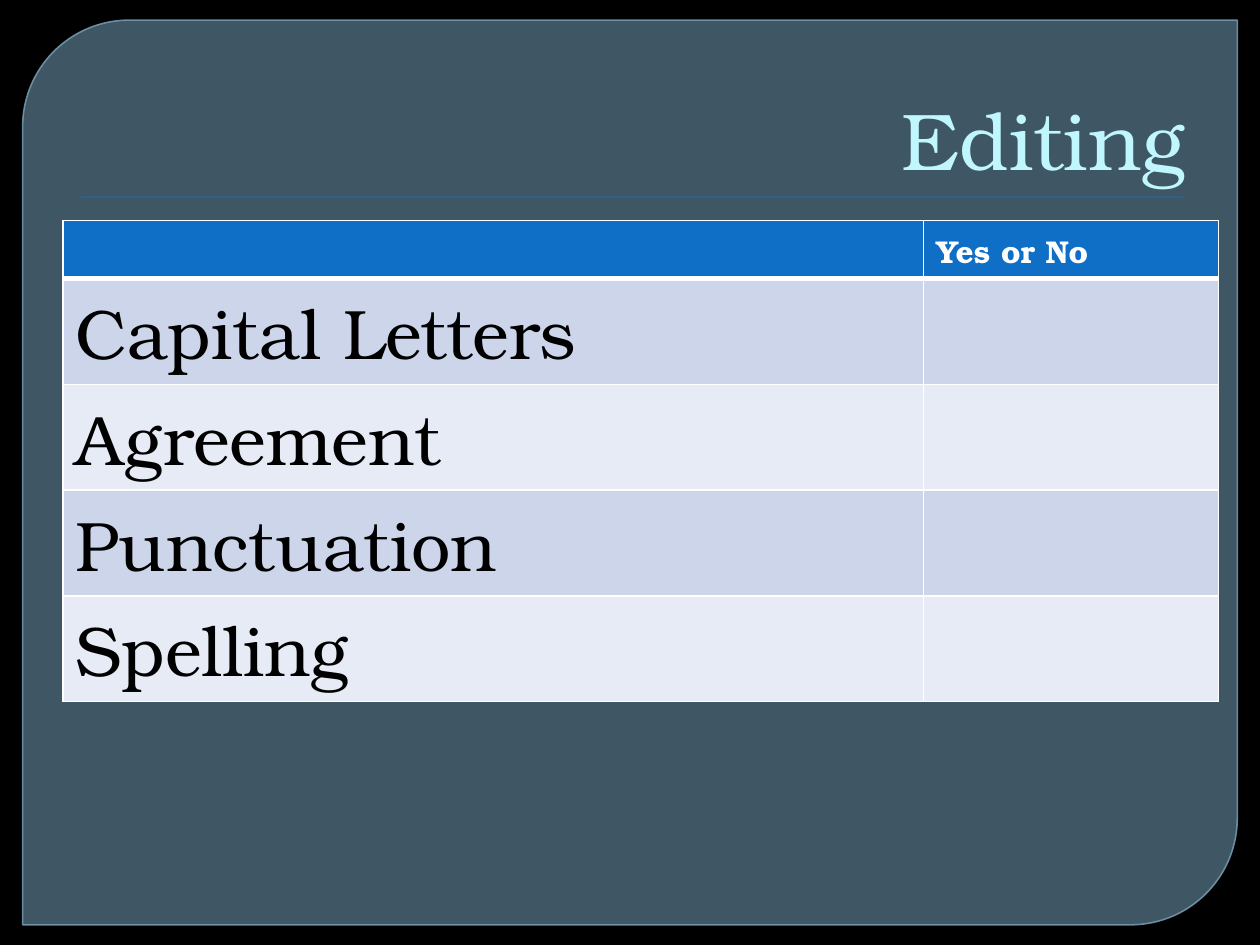
from dataclasses import dataclass

import pptx
import pptx.util
from lxml import etree
from pptx.dml.color import RGBColor
from pptx.enum.shapes import MSO_SHAPE
from pptx.enum.text import MSO_ANCHOR, PP_ALIGN
from pptx.oxml.ns import qn
from pptx.util import Inches

FONT = "TeX Gyre Bonum"
COLORS = {
    "background": "000000",
    "panel": "61869C",
    "panel_line": "779BB2",
    "accent": "0F6FC6",
    "title": "C0F7FF",
    "white": "FFFFFF",
    "black": "000000",
    "band_dark": "CCD5EA",
    "band_light": "E7EBF5",
}


@dataclass
class RowStyle:
    height: float
    fill: str
    text: str
    size: int
    bold: bool
    bottom_border: float


HEADER = RowStyle(0.46, "accent", "white", 18, True, 3)
BANDS = [
    RowStyle(0.84, fill, "black", 40, False, 1)
    for fill in ("band_dark", "band_light")
]
ROWS = [
    ("", "Yes or No"),
    ("Capital Letters", ""),
    ("Agreement", ""),
    ("Punctuation", ""),
    ("Spelling", ""),
]
COLUMN_WIDTHS = (6.83, 2.34)


def rgb(name: str) -> RGBColor:
    return RGBColor.from_string(COLORS[name])


def set_alpha(parent, percent: int) -> None:
    """Make the solid fill directly under parent partly transparent."""
    color = parent.find(qn("a:solidFill")).find(qn("a:srgbClr"))
    etree.SubElement(color, qn("a:alpha"), val=str(percent * 1000))


def add_panel(slide) -> None:
    sp = slide.shapes.add_shape(
        MSO_SHAPE.ROUND_2_DIAG_RECTANGLE,
        Inches(0.18), Inches(0.16), Inches(9.64), Inches(7.18),
    )
    sp.adjustments[0] = 0.118
    sp.adjustments[1] = 0
    sp.shadow.inherit = False
    sp.fill.solid()
    sp.fill.fore_color.rgb = rgb("panel")
    sp.line.color.rgb = rgb("panel_line")
    sp.line.width = pptx.util.Pt(0.87)
    sp_pr = sp._element.spPr
    set_alpha(sp_pr, 65)
    set_alpha(sp_pr.find(qn("a:ln")), 88)


def add_title_rule(slide) -> None:
    sp = slide.shapes.add_shape(
        MSO_SHAPE.RECTANGLE, Inches(0.64), Inches(1.56), Inches(8.75), Inches(0.01)
    )
    sp.shadow.inherit = False
    sp.fill.solid()
    sp.fill.fore_color.rgb = rgb("accent")
    sp.line.fill.background()


def style_text(p, size: int, color: str, bold: bool = False) -> None:
    p.font.name = FONT
    p.font.size = pptx.util.Pt(size)
    p.font.bold = bold
    p.font.color.rgb = rgb(color)


def add_title(slide, text: str) -> None:
    tf = slide.shapes.add_textbox(
        Inches(0.5), Inches(0.28), Inches(9), Inches(1.25)
    ).text_frame
    tf.word_wrap = True
    tf.vertical_anchor = MSO_ANCHOR.BOTTOM
    p = tf.paragraphs[0]
    p.text = text
    p.alignment = PP_ALIGN.RIGHT
    style_text(p, 46, "title")


def set_borders(cell, top: float, bottom: float) -> None:
    """Draw white borders; must run before the cell's fill is set."""
    tc_pr = cell._tc.get_or_add_tcPr()
    for side, points in (("L", 1), ("R", 1), ("T", top), ("B", bottom)):
        ln = etree.SubElement(
            tc_pr, qn(f"a:ln{side}"), w=str(pptx.util.Pt(points))
        )
        fill = etree.SubElement(ln, qn("a:solidFill"))
        etree.SubElement(fill, qn("a:srgbClr"), val=COLORS["white"])


def add_checklist(slide) -> None:
    styles = [HEADER] + [BANDS[i % 2] for i in range(len(ROWS) - 1)]
    table = slide.shapes.add_table(
        len(ROWS), len(COLUMN_WIDTHS), Inches(0.5), Inches(1.75),
        Inches(sum(COLUMN_WIDTHS)), Inches(sum(s.height for s in styles)),
    ).table
    for column, width in zip(table.columns, COLUMN_WIDTHS):
        column.width = Inches(width)
    top_border = 1
    for r, (style, texts) in enumerate(zip(styles, ROWS)):
        table.rows[r].height = Inches(style.height)
        for c, text in enumerate(texts):
            cell = table.cell(r, c)
            set_borders(cell, top_border, style.bottom_border)
            cell.fill.solid()
            cell.fill.fore_color.rgb = rgb(style.fill)
            if text:
                cell.text = text
                p = cell.text_frame.paragraphs[0]
                style_text(p, style.size, style.text, style.bold)
        top_border = style.bottom_border


def main() -> None:
    prs = pptx.Presentation()
    prs.slide_width = Inches(10)
    prs.slide_height = Inches(7.5)
    slide = prs.slides.add_slide(prs.slide_layouts[6])
    slide.background.fill.solid()
    slide.background.fill.fore_color.rgb = rgb("background")
    add_panel(slide)
    add_title_rule(slide)
    add_title(slide, "Editing")
    add_checklist(slide)
    prs.save("out.pptx")


if __name__ == "__main__":
    main()
